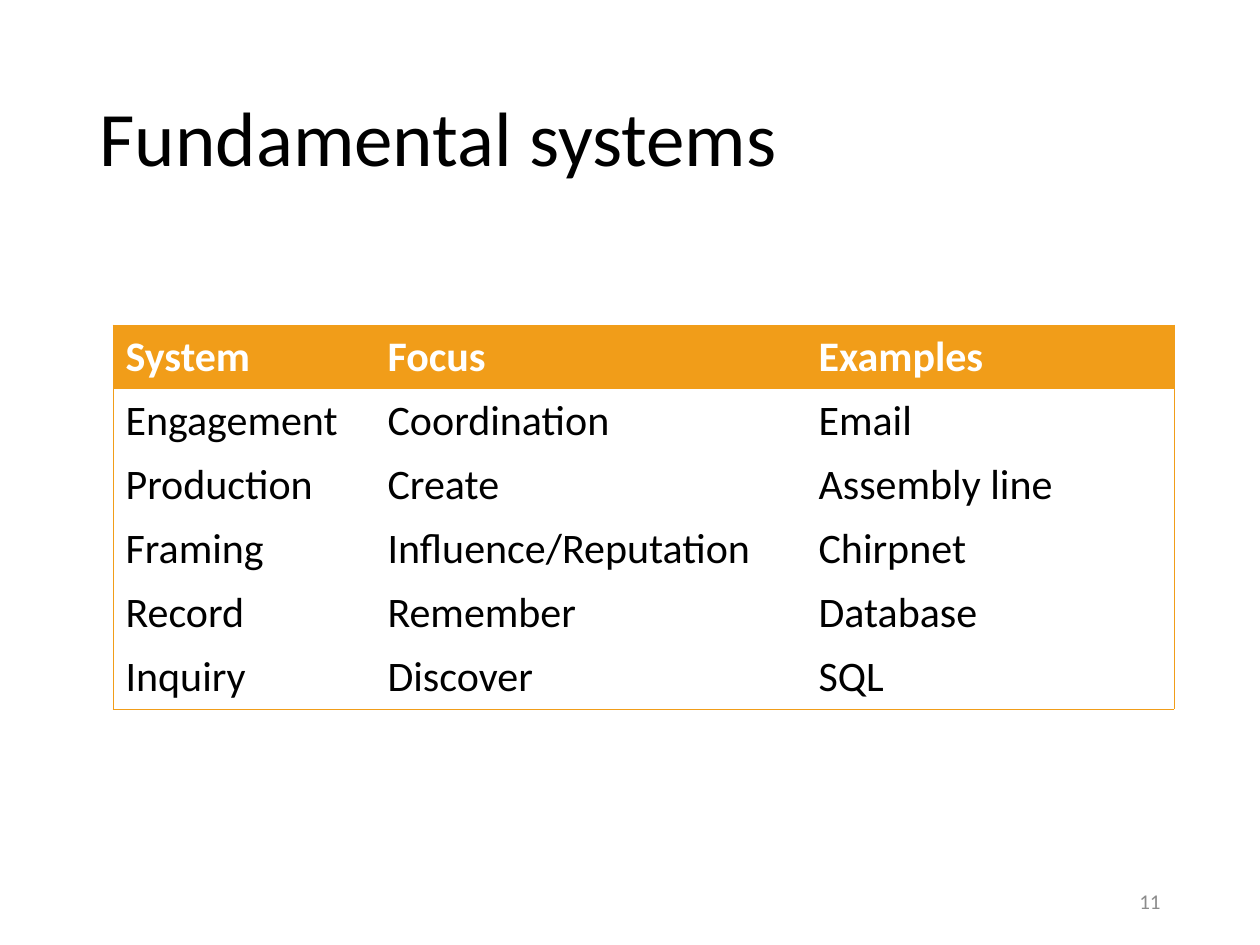
"""Build the slide that lists the fundamental systems in a table."""
import dataclasses

import lxml.etree
import pptx
import pptx.dml.color
import pptx.enum.text
import pptx.oxml.ns
import pptx.util

ANCHOR = pptx.enum.text.MSO_ANCHOR
ALIGN = pptx.enum.text.PP_ALIGN
PLAIN_TABLE = "{2D5ABB26-0587-4C30-8999-92F81FD0307C}"


@dataclasses.dataclass(frozen=True)
class Theme:
    font: str = "Calibri"
    ink: str = "000000"
    accent: str = "F19D19"
    header: str = "FFFFFF"
    muted: str = "8C8C8C"
    title: int = 44
    body: int = 24
    small: int = 12
    border: float = 0.5


class SlideBuilder:
    SCALE = pptx.util.Inches(1) / 126

    def __init__(self, deck, theme):
        self.theme = theme
        self.page = deck.slides.add_slide(deck.slide_layouts[5])

    @classmethod
    def px(cls, *lengths):
        return [pptx.util.Emu(round(length * cls.SCALE)) for length in lengths]

    def add_text(self, frame, text, size, color, bold=False, align=ALIGN.LEFT):
        para = frame.paragraphs[0]
        para.alignment = align
        span = para.add_run()
        span.text = text
        span.font.name = self.theme.font
        span.font.size = pptx.util.Pt(size)
        span.font.bold = bold
        span.font.color.rgb = pptx.dml.color.RGBColor.from_string(color)
        return para

    def title(self, text, *bounds):
        box = self.page.shapes.title
        box.left, box.top, box.width, box.height = self.px(*bounds)
        box.text_frame.vertical_anchor = ANCHOR.MIDDLE
        para = self.add_text(box.text_frame, text, self.theme.title, self.theme.ink)
        para.line_spacing = 0.9

    def page_number(self, text, *bounds):
        box = self.page.shapes.add_textbox(*self.px(*bounds))
        box.text_frame.word_wrap = True
        box.text_frame.vertical_anchor = ANCHOR.MIDDLE
        self.add_text(box.text_frame, text, self.theme.small, self.theme.muted, align=ALIGN.RIGHT)

    def table(self, rows, left, top, widths, row_height):
        bounds = self.px(left, top, sum(widths), row_height * len(rows))
        grid = self.page.shapes.add_table(len(rows), len(widths), *bounds).table
        properties = grid._tbl.tblPr
        properties.find(pptx.oxml.ns.qn("a:tableStyleId")).text = PLAIN_TABLE
        grid.horz_banding = False
        for column, width in zip(grid.columns, self.px(*widths)):
            column.width = width
        for row_index, texts in enumerate(rows):
            grid.rows[row_index].height = self.px(row_height)[0]
            for column_index, text in enumerate(texts):
                cell = grid.cell(row_index, column_index)
                self.fill_cell(cell, text, row_index == 0)
                edges = {
                    "lnL": column_index == 0,
                    "lnR": column_index == len(widths) - 1,
                    "lnT": row_index == 0,
                    "lnB": row_index == len(rows) - 1,
                }
                self.outline_cell(cell, [edge for edge, outer in edges.items() if outer])

    def fill_cell(self, cell, text, is_header):
        color = self.theme.header if is_header else self.theme.ink
        self.add_text(cell.text_frame, text, self.theme.body, color, is_header)
        if is_header:
            cell.fill.solid()
            cell.fill.fore_color.rgb = pptx.dml.color.RGBColor.from_string(self.theme.accent)
        else:
            cell.fill.background()

    def outline_cell(self, cell, edges):
        qn = pptx.oxml.ns.qn
        for index, edge in enumerate(edges):
            line = lxml.etree.Element(qn(f"a:{edge}"), w=str(pptx.util.Pt(self.theme.border)))
            fill = lxml.etree.SubElement(line, qn("a:solidFill"))
            lxml.etree.SubElement(fill, qn("a:srgbClr"), val=self.theme.accent)
            cell._tc.get_or_add_tcPr().insert(index, line)


def main():
    deck = pptx.Presentation()
    deck.slide_width, deck.slide_height = SlideBuilder.px(1260, 945)
    slide = SlideBuilder(deck, Theme())
    slide.title("Fundamental systems", 87, 50, 1086, 183)
    slide.page_number("11", 890, 876, 283, 50)
    systems = [
        ("System", "Focus", "Examples"),
        ("Engagement", "Coordination", "Email"),
        ("Production", "Create", "Assembly line"),
        ("Framing", "Influence/Reputation", "Chirpnet"),
        ("Record", "Remember", "Database"),
        ("Inquiry", "Discover", "SQL"),
    ]
    slide.table(systems, 113, 325, (262, 431, 368), 64)
    deck.save("out.pptx")


if __name__ == "__main__":
    main()
